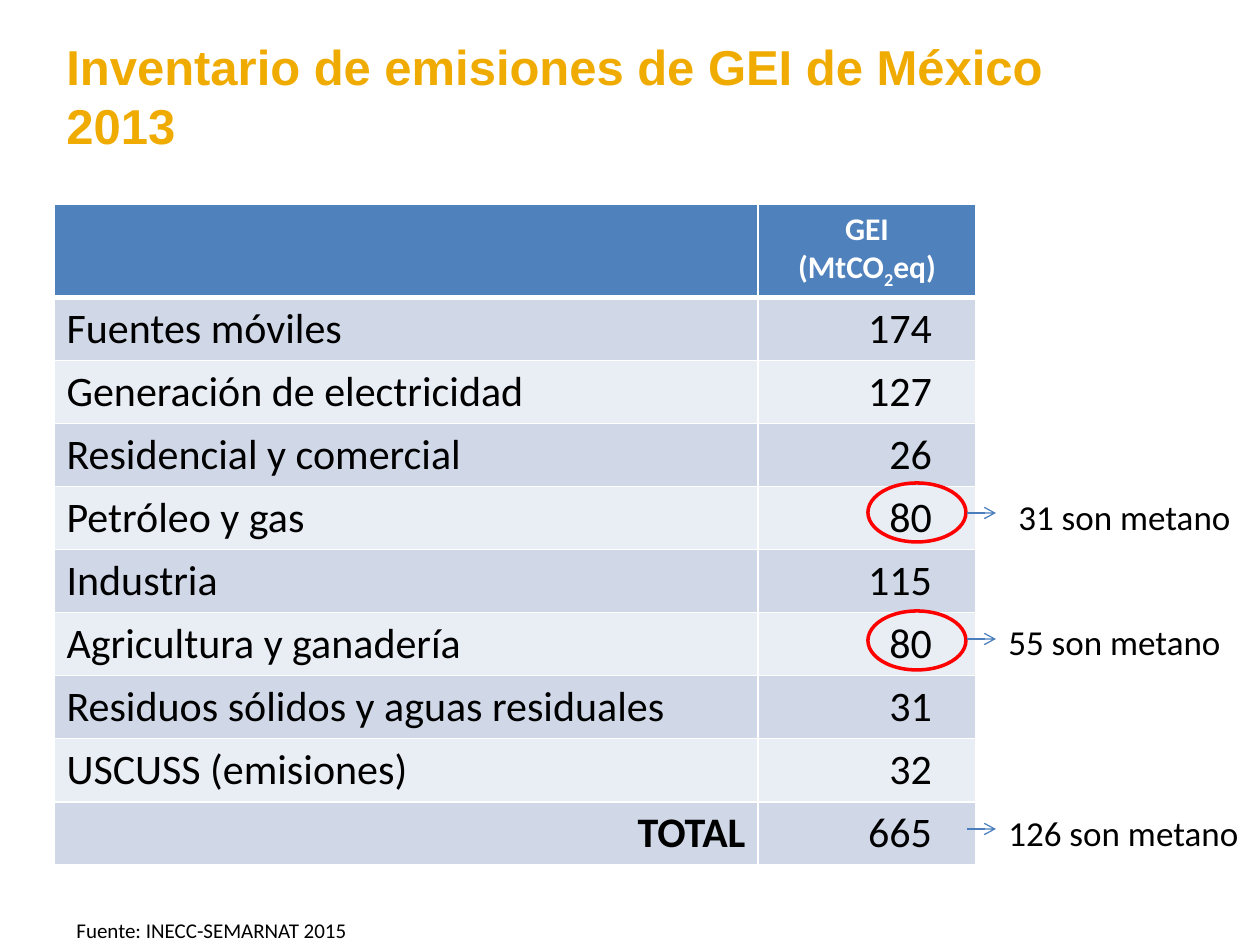
from lxml import etree
from pptx import Presentation
from pptx.dml.color import RGBColor
from pptx.enum.shapes import MSO_CONNECTOR, MSO_SHAPE
from pptx.enum.text import MSO_AUTO_SIZE, PP_ALIGN
from pptx.oxml.ns import qn
from pptx.util import Pt

LEFT, MID, RIGHT = PP_ALIGN.LEFT, PP_ALIGN.CENTER, PP_ALIGN.RIGHT
GROW = MSO_AUTO_SIZE.SHAPE_TO_FIT_TEXT
OVAL, LINE = MSO_SHAPE.OVAL, MSO_CONNECTOR.STRAIGHT
PX = 914400 // 126

HEX = {"gold": "F0AB00", "black": "000000", "white": "FFFFFF",
       "head": "4F81BD", "dark": "D0D8E8", "light": "E9EDF4",
       "red": "FF0000", "arrow": "4B7EBC"}

TITLE = "Inventario de emisiones de GEI de México 2013"
SOURCE = "Fuente: INECC-SEMARNAT 2015"
UNITS = ["GEI", [("(MtCO", 0), ("2", -25000), ("eq)", 0)]]
ROWS = [
    ("Fuentes móviles", 174),
    ("Generación de electricidad", 127),
    ("Residencial y comercial", 26),
    ("Petróleo y gas", 80),
    ("Industria", 115),
    ("Agricultura y ganadería", 80),
    ("Residuos sólidos y aguas residuales", 31),
    ("USCUSS (emisiones)", 32),
    ("TOTAL", 665),
]
# text, left and top of the note, middle of its arrow, top of the ring
NOTES = [
    ("31 son metano", 1006, 489, 513, 483),
    ("55 son metano", 996, 614, 639, 611),
    ("126 son metano", 996, 805, 829, None),
]
COLS, HEAD_H, ROW_H = (704, 218), 92, 63
TABLE_X, TABLE_Y = 54, 204
RING_X, RING_W, RING_H = 868, 98, 59
ARROW_X, ARROW_W = 967, 29


def px(*nums):
    return [n * PX for n in nums]


def rgb(name):
    return RGBColor.from_string(HEX[name])


def write(frame, paras, size=24, color="black", bold=False,
          font="Calibri", align=LEFT):
    """Each paragraph is a string or a list of (text, baseline) runs."""
    for i, para in enumerate(paras):
        p = frame.paragraphs[0] if i == 0 else frame.add_paragraph()
        p.alignment = align
        for text, base in [(para, 0)] if isinstance(para, str) else para:
            run = p.add_run()
            run.text = text
            run.font.size, run.font.bold = Pt(size), bold
            run.font.name = font
            run.font.color.rgb = rgb(color)
            if base:
                run.font._element.set("baseline", str(base))


def label(slide, text, box, wrap=False, **style):
    frame = slide.shapes.add_textbox(*px(*box)).text_frame
    frame.word_wrap = wrap
    frame.auto_size = GROW
    write(frame, [text], **style)


def paint(cell, color, top=1, bottom=1):
    """Give a cell white edges, in points, and a fill."""
    props = cell._tc.get_or_add_tcPr()
    for side, width in zip("LRTB", (1, 1, top, bottom)):
        edge = etree.SubElement(props, qn(f"a:ln{side}"), w=str(Pt(width)))
        fill = etree.SubElement(edge, qn("a:solidFill"))
        etree.SubElement(fill, qn("a:srgbClr"), val=HEX["white"])
    cell.fill.solid()
    cell.fill.fore_color.rgb = rgb(color)


def draw_table(slide):
    count = len(ROWS) + 1
    high = HEAD_H + ROW_H * len(ROWS)
    table = slide.shapes.add_table(
        count, 2, *px(TABLE_X, TABLE_Y, sum(COLS), high)).table
    for col, width in zip(table.columns, COLS):
        col.width = width * PX
    for i, row in enumerate(table.rows):
        row.height = (ROW_H if i else HEAD_H) * PX
    for c in (0, 1):
        paint(table.cell(0, c), "head", bottom=3)
    write(table.cell(0, 1).text_frame, UNITS, size=18, color="white",
          bold=True, align=MID)
    for i, (name, value) in enumerate(ROWS, 1):
        total = i == len(ROWS)
        left, right = table.cell(i, 0), table.cell(i, 1)
        for cell in (left, right):
            paint(cell, "dark" if i % 2 else "light", top=3 if i == 1 else 1)
        right.margin_right = 44 * PX
        write(left.text_frame, [name], bold=total,
              align=RIGHT if total else LEFT)
        write(right.text_frame, [str(value)], align=RIGHT)


def draw_ring(slide, top):
    ring = slide.shapes.add_shape(OVAL, *px(RING_X, top, RING_W, RING_H))
    ring.shadow.inherit = False
    ring.fill.background()
    ring.line.color.rgb = rgb("red")
    ring.line.width = Pt(2)


def draw_arrow(slide, y):
    arrow = slide.shapes.add_connector(
        LINE, *px(ARROW_X, y, ARROW_X + ARROW_W, y))
    arrow.line.color.rgb = rgb("arrow")
    arrow.line.width = Pt(0.75)
    etree.SubElement(arrow.line._get_or_add_ln(), qn("a:tailEnd"),
                     type="arrow")
    etree.SubElement(arrow._element.spPr, qn("a:effectLst"))


def main():
    prs = Presentation()
    prs.slide_width, prs.slide_height = px(1260, 945)
    slide = prs.slides.add_slide(prs.slide_layouts[6])
    label(slide, TITLE, (54, 30, 1067, 131), wrap=True, size=28,
          color="gold", bold=True, font="Arial")
    label(slide, SOURCE, (64, 911, 299, 38), size=12)
    draw_table(slide)
    for text, x, y, mid, ring in NOTES:
        if ring:
            draw_ring(slide, ring)
        draw_arrow(slide, mid)
        wide = 257 if len(text) > 13 else 239
        label(slide, text, (x, y, wide, 55), size=20)
    prs.save("out.pptx")


if __name__ == "__main__":
    main()
